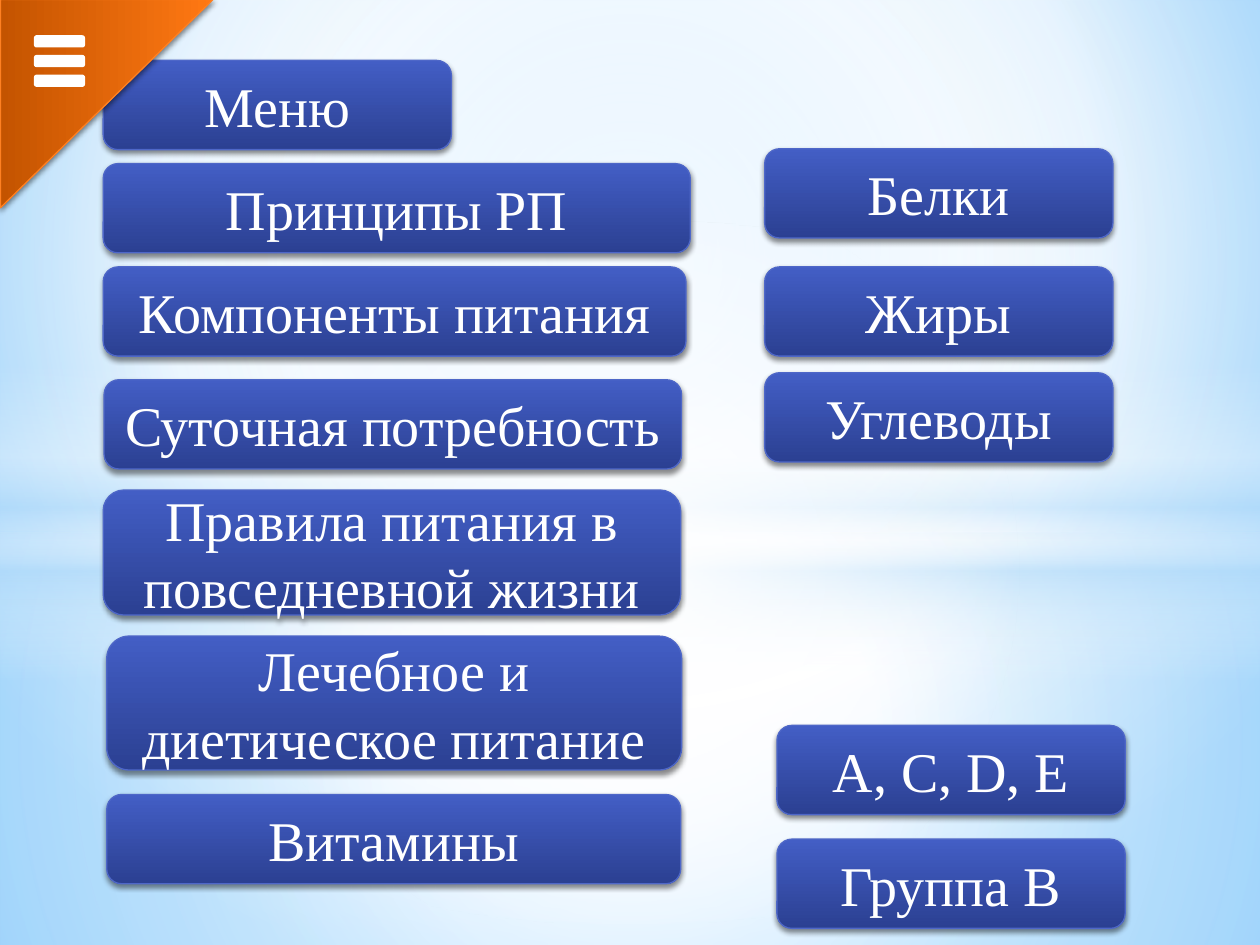
from lxml.etree import SubElement as Sub
from pptx import Presentation
from pptx.dml.color import RGBColor
from pptx.enum.shapes import MSO_SHAPE as Kind
from pptx.enum.text import MSO_ANCHOR as Anchor, PP_ALIGN as Align
from pptx.oxml import parse_xml
from pptx.oxml.ns import nsdecls, qn
from pptx.util import Pt

WIDE, HIGH = 720, 540
ROW = 51
MID = (50, 50, 50, 50)
FONT = {"name": "Times New Roman", "size": Pt(32)}

BACK = [(0, "9ED5FF"), (60, "FFFFFF"), (100, "5BB9FF")]
BLUE = [(0, "435EC5"), (100, "2B4092")]
ORANGE = [(0, "FF7813"), (100, "C45400")]

# kind, box, stops (place, colour, opacity), focus of a round gradient
GLOWS = [
    (Kind.RECTANGLE, (0, 304.5, WIDE, 235.5),
     [(0, "FFFFFF", 91), (37, "FFFFFF", 76), (100, "B4DCFA", 79)], MID),
    (Kind.RECTANGLE, (0, 0, WIDE, 304.5),
     [(0, "FFFFFF", 89), (48, "FFFFFF", 62), (100, "B4DCFA", 79)], MID),
    (Kind.RECTANGLE, (0, 209, WIDE, 180),
     [(0, "FFFFFF", 0), (29, "FFFFFF", 30), (45, "B4DCFA", 40),
      (55, "FFFFFF", 26), (65, "B4DCFA", 60), (100, "FFFFFF", 0)], None),
    (Kind.OVAL, (0, 126, WIDE, 402),
     [(0, "FFFFFF"), (54, "FFFFFF", 0)], MID),
]

MENU = [
    ("Правила питания в повседневной жизни", 59, 280, 330, 71.5),
    ("Лечебное и диетическое питание", 61, 363.5, 328.5, 76.5),
    ("Суточная потребность", 59.5, 217, 330, ROW),
    ("Компоненты питания", 59, 152.5, 333, ROW),
    ("Принципы РП", 59, 93.5, 335.5, ROW),
    ("Меню", 59, 34.5, 199, ROW),
    ("Витамины", 61, 454, 328, ROW),
]
FOODS = [("Белки", 85), ("Жиры", 152.5), ("Углеводы", 213)]
VITS = [("Группа В", 479.5), ("А, С, D, E", 414.5)]


def rgb(code):
    return RGBColor.from_string(code)


def blend(fill, props, stops, focus=None):
    """Fill with a gradient: downward, or round when a focus is given."""
    grad = parse_xml(f'<a:gradFill {nsdecls("a")} rotWithShape="1"/>')
    row = Sub(grad, qn("a:gsLst"))
    for place, code, *alpha in stops:
        stop = Sub(row, qn("a:gs"), pos=str(place * 1000))
        tint = Sub(stop, qn("a:srgbClr"), val=code)
        for part in alpha:
            Sub(tint, qn("a:alpha"), val=str(part * 1000))
    if focus:
        ring = Sub(grad, qn("a:path"), path="circle")
        sides = {s: str(v * 1000) for s, v in zip("ltrb", focus)}
        Sub(ring, qn("a:fillToRect"), **sides)
    else:
        Sub(grad, qn("a:lin"), ang="5400000", scaled="0")
    fill.solid()
    props.replace(props.find(qn("a:solidFill")), grad)


def add(shapes, kind, box, edge=None, width=0.75):
    shape = shapes.add_shape(kind, *map(Pt, box))
    shape.shadow.inherit = False
    if edge:
        shape.line.color.rgb = rgb(edge)
        shape.line.width = Pt(width)
    else:
        shape.line.fill.background()
    return shape


def shade(shape):
    """Give the shape a soft shadow below."""
    glow = shape._element.spPr.find(qn("a:effectLst"))
    drop = Sub(glow, qn("a:outerShdw"), blurRad=str(Pt(3.1)),
               dist=str(Pt(1.8)), dir="5400000", rotWithShape="0")
    tint = Sub(drop, qn("a:srgbClr"), val="000000")
    Sub(tint, qn("a:alpha"), val="45000")


def button(shapes, text, *box):
    shape = add(shapes, Kind.ROUNDED_RECTANGLE, box, "4E67C8")
    blend(shape.fill, shape._element.spPr, BLUE)
    shade(shape)
    frame = shape.text_frame
    frame.word_wrap = True
    frame.vertical_anchor = Anchor.MIDDLE
    para = frame.paragraphs[0]
    para.alignment = Align.CENTER
    run = para.add_run()
    run.text = text
    for name, value in FONT.items():
        setattr(run.font, name, value)
    run.font.color.rgb = rgb("FFFFFF")


def corner(shapes):
    shape = add(shapes, Kind.RIGHT_TRIANGLE, (1.5, -1.5, 119, 121.5), "FF8021")
    shape.rotation = 90
    blend(shape.fill, shape._element.spPr, ORANGE)
    shade(shape)


def burger(shapes):
    """Three white bars as a menu sign."""
    group = shapes.add_group_shape()
    for i in range(3):
        box = (20, 20.75 + 11.25 * i, 28, 5.75)
        bar = add(group.shapes, Kind.ROUNDED_RECTANGLE, box, "FFFFFF", 1.25)
        bar.fill.solid()
        bar.fill.fore_color.rgb = rgb("FFFFFF")


def main():
    deck = Presentation()
    deck.slide_width, deck.slide_height = Pt(WIDE), Pt(HIGH)
    slide = deck.slides.add_slide(deck.slide_layouts[6])
    shapes = slide.shapes
    fill = slide.background.fill
    blend(fill, slide.element.cSld.bg.bgPr, BACK, (20, 10, 20, 60))
    for kind, box, stops, focus in GLOWS:
        shape = add(shapes, kind, box)
        blend(shape.fill, shape._element.spPr, stops, focus)
    for item in MENU:
        button(shapes, *item)
    corner(shapes)
    burger(shapes)
    for left, items in ((437, FOODS), (444, VITS)):
        for text, top in items:
            button(shapes, text, left, top, 199, ROW)
    deck.save("out.pptx")


if __name__ == "__main__":
    main()
